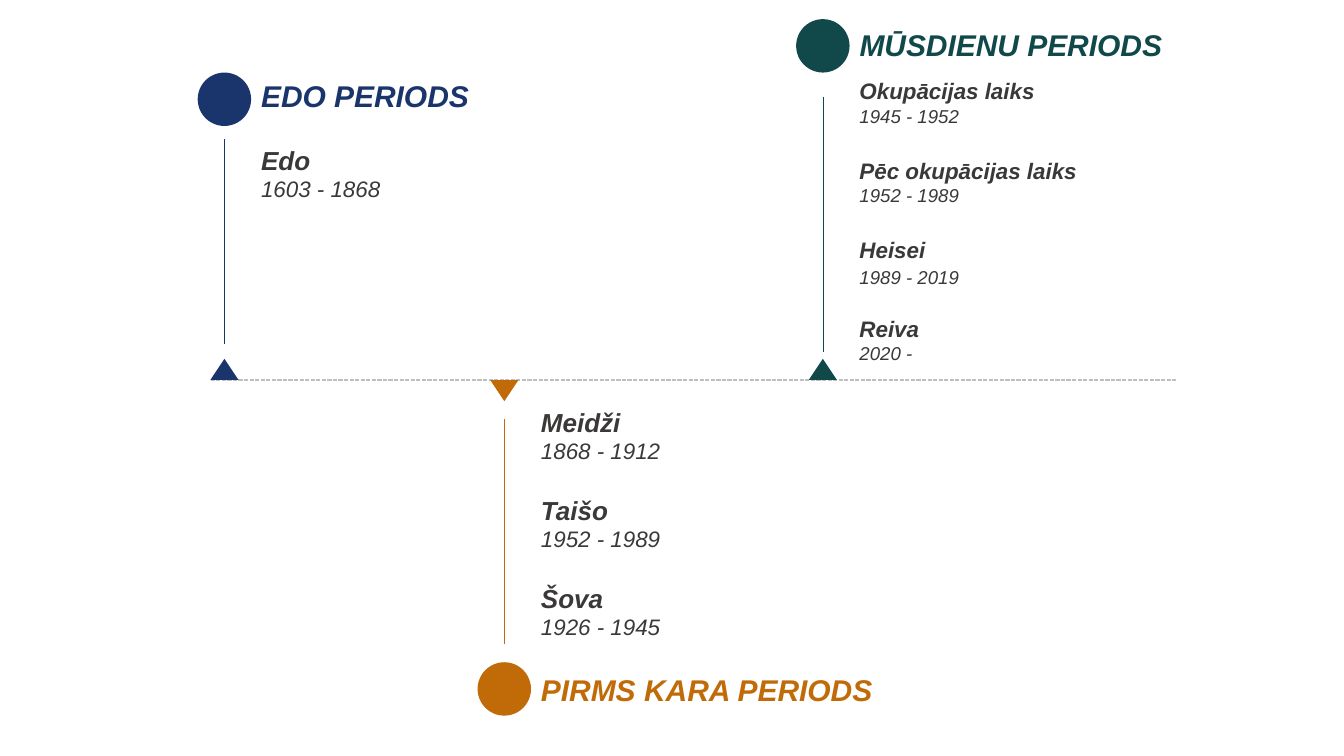
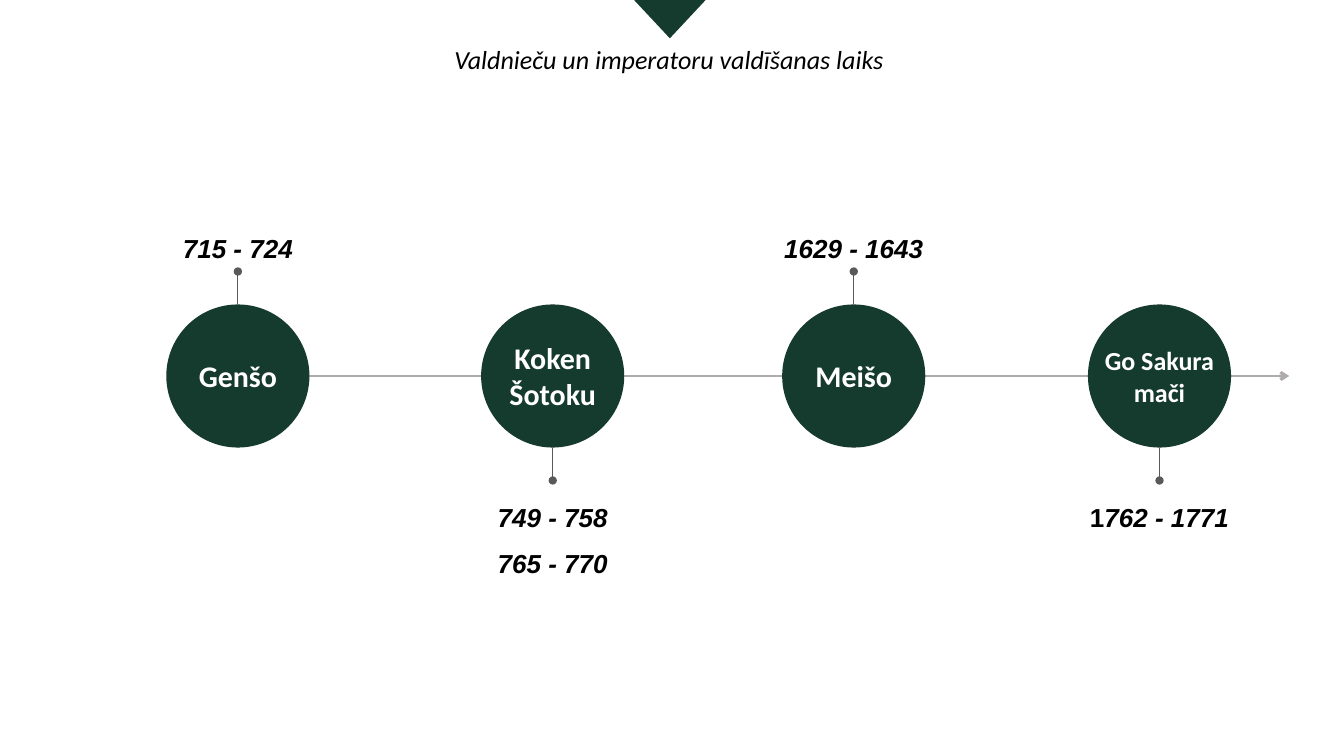
from dataclasses import dataclass

from lxml.etree import SubElement
from pptx import Presentation
from pptx.dml.color import RGBColor
from pptx.enum.dml import MSO_LINE
from pptx.enum.shapes import MSO_CONNECTOR, MSO_SHAPE
from pptx.enum.text import MSO_ANCHOR, PP_ALIGN
from pptx.oxml.ns import qn
from pptx.util import Emu, Inches, Pt

SLIDE_WIDTH, SLIDE_HEIGHT = Inches(13.33), Inches(7.5)
COLUMNS, ROWS = 40, 22.5
TITLE_ONLY, BLANK = 5, 6

NAVY, ORANGE, TEAL, GREEN = "1A356C", "C16B08", "11494A", "153A2E"
BLACK, WHITE, CHARCOAL = "000000", "FFFFFF", "3B3838"
DASH_GREY, ARROW_GREY, PIN_GREY = "BFBFBF", "AFABAB", "595959"

HEADING_SIZE, TEXT_SIZE = 21.4, 18.6

# Period timeline, in grid cells
PERIOD_AXIS = 11.31
DOT, MARKER_WIDTH, MARKER_HEIGHT = 1.59, 0.84, 0.63
HEADING_WIDTH, HEADING_HEIGHT, ERAS_WIDTH = 12, 1.38, 8.7

# Reign timeline, in grid cells
REIGN_AXIS = 11.19
DISC, PIN = 4.26, 0.98
DATES_WIDTH, DATES_LINE = 5, 1.55


@dataclass(frozen=True)
class Era:
    name: str
    years: str
    space_before: float = 0
    years_space: float = 0


@dataclass(frozen=True)
class Period:
    heading: str
    color: str
    center: float
    dot_top: float
    heading_top: float
    stem: tuple[float, float]
    stem_width: float
    eras_top: float
    eras_height: float
    sizes: tuple[float, float]
    eras: tuple[Era, ...]
    above: bool = True


@dataclass(frozen=True)
class Reign:
    name_lines: tuple[str, ...]
    dates: tuple[str, ...]
    center: float
    above: bool
    name_size: float = HEADING_SIZE
    upright_start: str = ""


PERIODS = (
    Period("EDO PERIODS", NAVY, 6.68, 2.16, 2.16, (4.14, 10.23), 0.5,
           4.14, 3.27, (18.6, 16), (Era("Edo", "1603 - 1868"),)),
    Period("PIRMS KARA PERIODS", ORANGE, 15.01, 19.71, 19.83, (12.48, 19.17), 0.5,
           11.94, 8.79, (18.6, 16),
           (Era("Meidži", "1868 - 1912"),
            Era("Taišo", "1952 - 1989", 21.4),
            Era("Šova", "1926 - 1945", 21.4)), above=False),
    Period("MŪSDIENU PERIODS", TEAL, 24.49, 0.57, 0.63, (2.88, 10.47), 0.25,
           2.16, 9.06, (16, 13.3),
           (Era("Okupācijas laiks", "1945 - 1952"),
            Era("Pēc okupācijas laiks", "1952 - 1989", 21.4),
            Era("Heisei", "1989 - 2019", 21.4, 2.5),
            Era("Reiva", "2020 -", 19))),
)

REIGNS = (
    Reign(("Genšo",), ("715 - 724",), 7.08, above=True),
    Reign(("Koken", "Šotoku"), ("749 - 758", "765 - 770"), 16.45, above=False),
    Reign(("Meišo",), ("1629 - 1643",), 25.41, above=True),
    Reign(("Go Sakura", "mači"), ("762 - 1771",), 34.51, above=False,
          name_size=TEXT_SIZE, upright_start="1"),
)


def across(columns: float) -> Emu:
    return Emu(round(columns * SLIDE_WIDTH / COLUMNS))


def down(rows: float) -> Emu:
    return Emu(round(rows * SLIDE_HEIGHT / ROWS))


def box(left: float, top: float, width: float, height: float) -> tuple:
    """Turn grid cells into the four lengths of a shape."""
    return across(left), down(top), across(width), down(height)


def rgb(color: str) -> RGBColor:
    return RGBColor.from_string(color)


def write(frame, text: str, *, size: float, color: str, font="Arial", bold=False,
          italic=False, align=PP_ALIGN.LEFT, space_before=0, spacing=1.0,
          same_line=False) -> None:
    """Add a formatted run, in a new paragraph unless same_line is set."""
    paragraph = frame.paragraphs[-1]
    if paragraph.runs and not same_line:
        paragraph = frame.add_paragraph()
    paragraph.alignment = align
    paragraph.space_before = Pt(space_before)
    paragraph.line_spacing = spacing
    run = paragraph.add_run()
    run.text = text
    run.font.name, run.font.size = font, Pt(size)
    run.font.bold, run.font.italic = bold, italic
    run.font.color.rgb = rgb(color)


def add_text_frame(slide, left: float, top: float, width: float, height: float):
    frame = slide.shapes.add_textbox(*box(left, top, width, height)).text_frame
    frame.word_wrap = True
    return frame


def add_solid(slide, preset, left: float, top: float, width: float, height: float,
              color: str, rotation: float = 0):
    shape = slide.shapes.add_shape(preset, *box(left, top, width, height))
    shape.shadow.inherit = False
    shape.fill.solid()
    shape.fill.fore_color.rgb = rgb(color)
    shape.line.fill.background()
    shape.rotation = rotation
    return shape


def add_line(slide, start: tuple[float, float], end: tuple[float, float], color: str,
             width: float, dash=None, tail: str = "") -> None:
    connector = slide.shapes.add_connector(
        MSO_CONNECTOR.STRAIGHT, across(start[0]), down(start[1]),
        across(end[0]), down(end[1]))
    connector.line.color.rgb = rgb(color)
    connector.line.width = Pt(width)
    if dash:
        connector.line.dash_style = dash
    properties = connector.element.spPr
    if tail:
        SubElement(properties.find(qn("a:ln")), qn("a:tailEnd"), type=tail)
    SubElement(properties, qn("a:effectLst"))


def draw_period(slide, period: Period) -> None:
    add_solid(slide, MSO_SHAPE.ISOSCELES_TRIANGLE, period.center - MARKER_WIDTH / 2,
              PERIOD_AXIS - (MARKER_HEIGHT if period.above else 0),
              MARKER_WIDTH, MARKER_HEIGHT, period.color, 0 if period.above else 180)
    stem_top, stem_bottom = period.stem
    add_line(slide, (period.center, stem_top), (period.center, stem_bottom),
             period.color, period.stem_width)
    add_solid(slide, MSO_SHAPE.OVAL, period.center - DOT / 2, period.dot_top,
              DOT, DOT, period.color)

    text_left = period.center + DOT / 2
    heading = add_text_frame(slide, text_left, period.heading_top,
                             HEADING_WIDTH, HEADING_HEIGHT)
    write(heading, period.heading, size=HEADING_SIZE, color=period.color,
          bold=True, italic=True)
    eras = add_text_frame(slide, text_left, period.eras_top,
                          ERAS_WIDTH, period.eras_height)
    name_size, years_size = period.sizes
    for era in period.eras:
        write(eras, era.name, size=name_size, color=CHARCOAL, bold=True, italic=True,
              space_before=era.space_before)
        write(eras, era.years, size=years_size, color=CHARCOAL, italic=True,
              space_before=era.years_space)


def draw_reign(slide, reign: Reign) -> None:
    disc = add_solid(slide, MSO_SHAPE.OVAL, reign.center - DISC / 2,
                     REIGN_AXIS - DISC / 2, DISC, DISC, GREEN)
    names = disc.text_frame
    names.word_wrap = False
    names.vertical_anchor = MSO_ANCHOR.MIDDLE
    for line in reign.name_lines:
        write(names, line, size=reign.name_size, color=WHITE, font="Calibri",
              bold=True, align=PP_ALIGN.CENTER)

    direction = -1 if reign.above else 1
    edge = REIGN_AXIS + direction * DISC / 2
    pin_end = edge + direction * PIN
    add_line(slide, (reign.center, edge), (reign.center, pin_end), PIN_GREY, 0.5,
             tail="oval")

    height = DATES_LINE * len(reign.dates) + 0.16
    dates_top = pin_end - height - 0.06 if reign.above else pin_end
    dates = add_text_frame(slide, reign.center - DATES_WIDTH / 2, dates_top,
                           DATES_WIDTH, height)
    style = dict(size=TEXT_SIZE, color=BLACK, bold=True, align=PP_ALIGN.CENTER,
                 spacing=1.5)
    if reign.upright_start:
        write(dates, reign.upright_start, **style)
    for index, line in enumerate(reign.dates):
        write(dates, line, italic=True, same_line=index == 0, **style)


def build_periods(presentation) -> None:
    slide = presentation.slides.add_slide(presentation.slide_layouts[BLANK])
    add_line(slide, (6.27, PERIOD_AXIS), (35.04, PERIOD_AXIS), DASH_GREY, 1,
             dash=MSO_LINE.SQUARE_DOT)
    for period in PERIODS:
        draw_period(slide, period)


def build_reigns(presentation) -> None:
    slide = presentation.slides.add_slide(presentation.slide_layouts[TITLE_ONLY])
    title = slide.shapes.title
    title.left, title.top, title.width, title.height = box(11, 1.14, 17.82, 1.23)
    title.text_frame.word_wrap = True
    title.text_frame.vertical_anchor = MSO_ANCHOR.TOP
    write(title.text_frame, "Valdnieču un imperatoru valdīšanas laiks", size=TEXT_SIZE,
          color=BLACK, font="Calibri", italic=True, align=PP_ALIGN.CENTER)
    add_solid(slide, MSO_SHAPE.ISOSCELES_TRIANGLE, 18.87, 0, 2.13, 1.14, GREEN, 180)
    add_line(slide, (REIGNS[0].center + DISC / 2, REIGN_AXIS), (38.37, REIGN_AXIS),
             ARROW_GREY, 2, tail="arrow")
    for reign in REIGNS:
        draw_reign(slide, reign)


def main() -> None:
    presentation = Presentation()
    presentation.slide_width, presentation.slide_height = SLIDE_WIDTH, SLIDE_HEIGHT
    build_periods(presentation)
    build_reigns(presentation)
    presentation.save("out.pptx")


if __name__ == "__main__":
    main()
